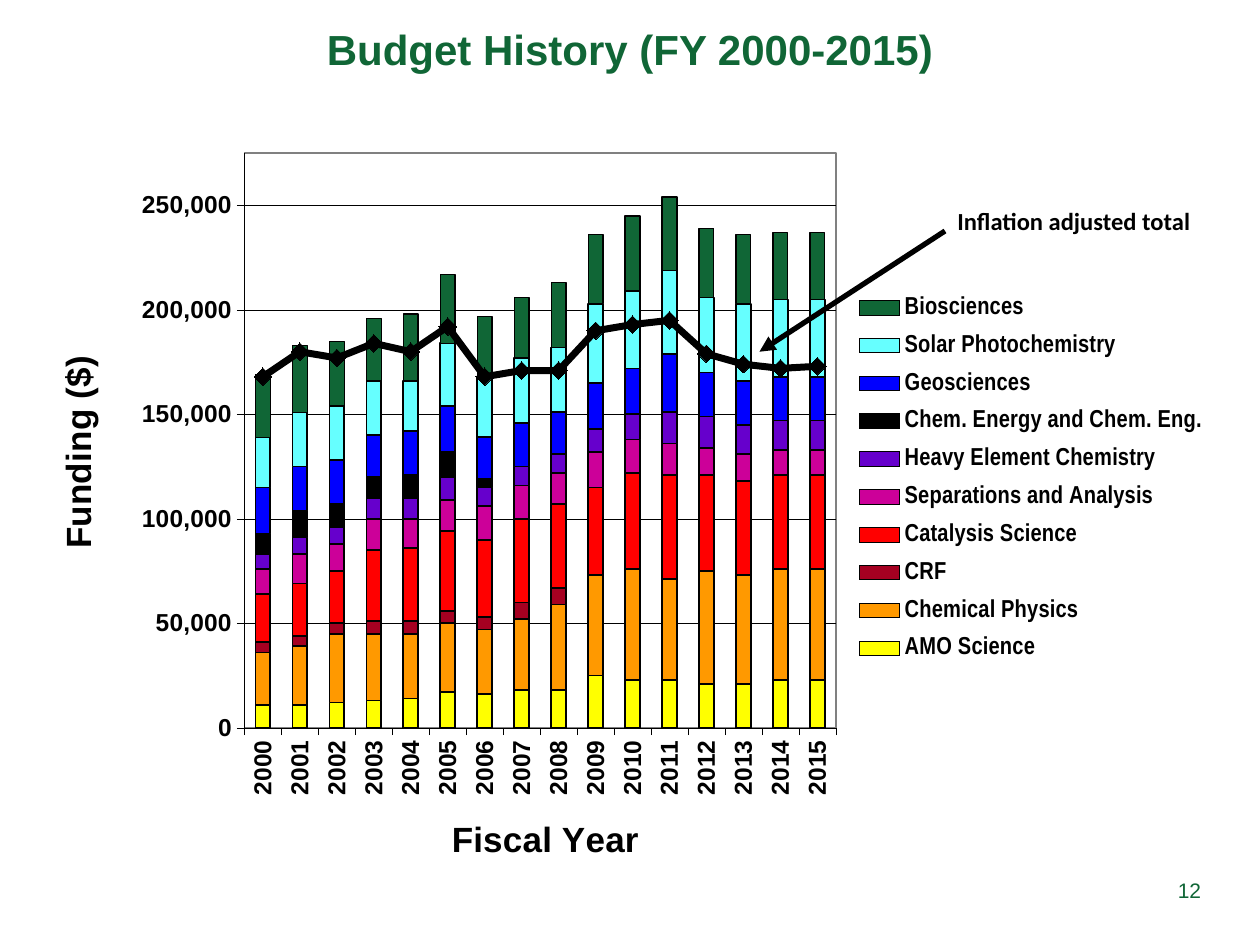
"""Build the budget history slide with a stacked chart and an adjusted total line."""
from dataclasses import dataclass
from typing import Any

from lxml.etree import SubElement as Sub
from pptx import Presentation
from pptx.chart.data import CategoryChartData as Data
from pptx.dml.color import RGBColor as Rgb
from pptx.enum.chart import XL_CHART_TYPE as Kind
from pptx.enum.chart import XL_LEGEND_POSITION as Side
from pptx.enum.chart import XL_MARKER_STYLE as Mark
from pptx.enum.chart import XL_TICK_MARK as Tick
from pptx.enum.shapes import MSO_CONNECTOR as Link
from pptx.enum.text import MSO_ANCHOR as Anchor
from pptx.enum.text import MSO_AUTO_SIZE as Fit
from pptx.enum.text import PP_ALIGN as Align
from pptx.oxml import parse_xml
from pptx.oxml.ns import nsdecls, qn
from pptx.util import Pt

HUE = {
    "black": "000000", "white": "FFFFFF", "gray": "808080", "green": "106636",
    "yellow": "FFFF00", "orange": "FF9900", "wine": "A50021", "red": "FF0000",
    "pink": "CC0099", "purple": "6600CC", "blue": "0000FF", "cyan": "66FFFF",
}


@dataclass
class Label:
    text: str
    box: tuple[float, float, float, float]
    face: str
    size: float
    hue: str
    bold: bool = False
    wide: bool = False


@dataclass
class Band:
    name: str
    hue: str
    vals: list[int]
    edge: float = 1


LABELS = [
    Label("Budget History (FY 2000-2015)", (0, 0, 720, 56), "Arial", 24, "green", True, True),
    Label("Inflation adjusted total", (540, 114, 164, 24.5), "Calibri", 14, "black", True),
    Label("12", (666, 498, 28, 21.6), "Arial", 12, "green"),
]
BANDS = [
    Band("AMO Science", "yellow",
         [11, 11, 12, 13, 14, 17, 16, 18, 18, 25, 23, 23, 21, 21, 23, 23]),
    Band("Chemical Physics", "orange",
         [25, 28, 33, 32, 31, 33, 31, 34, 41, 48, 53, 48, 54, 52, 53, 53]),
    Band("CRF", "wine", [5, 5, 5, 6, 6, 6, 6, 8, 8] + [0] * 7),
    Band("Catalysis Science", "red",
         [23, 25, 25, 34, 35, 38, 37, 40, 40, 42, 46, 50, 46, 45, 45, 45]),
    Band("Separations and Analysis", "pink",
         [12, 14, 13, 15, 14, 15, 16, 16, 15, 17, 16, 15, 13, 13, 12, 12]),
    Band("Heavy Element Chemistry", "purple",
         [7, 8, 8, 10, 10, 11, 9, 9, 9, 11, 12, 15, 15, 14, 14, 14]),
    Band("Chem. Energy and Chem. Eng.", "black",
         [10, 13, 11, 10, 11, 12, 4] + [0] * 9),
    Band("Geosciences", "blue",
         [22, 21, 21, 20, 21, 22, 20, 21, 20, 22, 22, 28, 21, 21, 21, 21]),
    Band("Solar Photochemistry", "cyan",
         [24, 26, 26, 26, 24, 30, 29, 31, 31, 38, 37, 40, 36, 37, 37, 37]),
    Band("Biosciences", "green",
         [30, 32, 31, 30, 32, 33, 29, 29, 31, 33, 36, 35, 33, 33, 32, 32], 0.75),
]
TOTAL = Band("Inflation adjusted total", "black",
             [168, 180, 177, 184, 180, 192, 168, 171, 171, 190, 193, 195,
              179, 174, 172, 173], 4)


def style(item: Any, vals: dict[str, Any]) -> None:
    for key, val in vals.items():
        setattr(item, key, val)


def ink(font: Any, face: str, size: float, hue: str, bold: bool) -> None:
    style(font, {"name": face, "size": Pt(size), "bold": bold})
    font.color.rgb = Rgb.from_string(HUE[hue])


def stroke(line: Any, hue: str, width: float) -> None:
    line.color.rgb = Rgb.from_string(HUE[hue])
    line.width = Pt(width)


def paint(fill: Any, hue: str) -> None:
    fill.solid()
    fill.fore_color.rgb = Rgb.from_string(HUE[hue])


def write(slide: Any, label: Label) -> None:
    frame = slide.shapes.add_textbox(*map(Pt, label.box)).text_frame
    style(frame, {
        "word_wrap": label.wide,
        "auto_size": Fit.NONE if label.wide else Fit.SHAPE_TO_FIT_TEXT,
        "vertical_anchor": Anchor.MIDDLE if label.wide else Anchor.TOP,
    })
    para = frame.paragraphs[0]
    para.alignment = Align.CENTER if label.wide else Align.LEFT
    run = para.add_run()
    run.text = label.text
    ink(run.font, label.face, label.size, label.hue, label.bold)


def place(root: Any, spots: dict[str, float], inner: bool = False) -> None:
    node = parse_xml(f"<c:layout {nsdecls('c')}><c:manualLayout/></c:layout>")
    rules = {"layoutTarget": "inner"} if inner else {}
    rules |= {"xMode": "edge", "yMode": "edge"} | spots
    for key, val in rules.items():
        Sub(node[0], qn(f"c:{key}")).set("val", str(val))
    old = root.find(qn("c:layout"))
    if old is None:
        root.insert(0, node)
    else:
        root.replace(old, node)


def split(chart: Any) -> None:
    bars = chart.element.xpath(".//c:barChart")[0]
    last = bars.findall(qn("c:ser"))[-1]
    flip = last.find(qn("c:invertIfNegative"))
    if flip is not None:
        last.remove(flip)
    lines = parse_xml(
        f"<c:lineChart {nsdecls('c')}><c:grouping val='standard'/>"
        "<c:varyColors val='0'/><c:marker val='1'/></c:lineChart>")
    lines.insert(2, last)
    for axis in bars.findall(qn("c:axId")):
        Sub(lines, qn("c:axId")).set("val", axis.get("val"))
    bars.addnext(lines)


def name_axis(axis: Any, text: str, left: float, top: float) -> None:
    style(axis, {"major_tick_mark": Tick.OUTSIDE, "minor_tick_mark": Tick.NONE})
    stroke(axis.format.line, "black", 0.25)
    ink(axis.tick_labels.font, "Arial", 14, "black", True)
    run = axis.axis_title.text_frame.paragraphs[0].add_run()
    run.text = text
    ink(run.font, "Arial", 20, "black", True)
    place(axis.axis_title.element, {"x": left, "y": top})


def draw_chart(slide: Any) -> None:
    data = Data()
    data.categories = [str(year) for year in range(2000, 2016)]
    for band in [*BANDS, TOTAL]:
        data.add_series(band.name, [val * 1000 for val in band.vals])
    box = map(Pt, (18, 66, 676, 432))
    chart = slide.shapes.add_chart(Kind.COLUMN_STACKED, *box, data).chart
    style(chart, {"has_title": False, "has_legend": True})
    ink(chart.font, "Arial", 12, "black", False)
    split(chart)
    bars, lines = chart.plots
    style(bars, {"gap_width": 150, "overlap": 100, "vary_by_categories": False})
    for band, ser in zip(BANDS, bars.series):
        paint(ser.format.fill, band.hue)
        stroke(ser.format.line, "black", band.edge)
    total = lines.series[0]
    total.smooth = False
    stroke(total.format.line, TOTAL.hue, TOTAL.edge)
    style(total.marker, {"style": Mark.DIAMOND, "size": 10})
    paint(total.marker.format.fill, TOTAL.hue)
    stroke(total.marker.format.line, TOTAL.hue, 0.75)
    years, funds = chart.category_axis, chart.value_axis
    name_axis(years, "Fiscal Year", 0.35, 0.92)
    name_axis(funds, "Funding ($)", 0.015, 0.31)
    turn = chart.element.xpath(".//c:catAx/c:txPr/a:bodyPr")[0]
    turn.set("rot", "-5400000")
    turn.set("vert", "horz")
    style(funds, {"minimum_scale": 0, "maximum_scale": 275000, "major_unit": 50000})
    style(funds.tick_labels, {
        "number_format": "#,##0;[Red]#,##0", "number_format_is_linked": False})
    stroke(funds.major_gridlines.format.line, "black", 0.25)
    area = chart.element.xpath(".//c:plotArea")[0]
    place(area, {"x": 0.18, "y": 0.05, "w": 0.5, "h": 0.76}, True)
    area.append(parse_xml(
        f"<c:spPr {nsdecls('c', 'a')}><a:solidFill><a:srgbClr val='{HUE['white']}'/>"
        f"</a:solidFill><a:ln w='{Pt(1)}'><a:solidFill><a:srgbClr val='{HUE['gray']}'/>"
        "</a:solidFill></a:ln></c:spPr>"))
    style(chart.legend, {"position": Side.RIGHT, "include_in_layout": False})
    ink(chart.legend.font, "Arial Narrow", 14, "black", True)
    key = chart.element.xpath(".//c:legend")[0]
    place(key, {"x": 0.69, "y": 0.22, "w": 0.31, "h": 0.52})
    key.find(qn("c:legendPos")).addnext(parse_xml(
        f"<c:legendEntry {nsdecls('c')}><c:idx val='{len(BANDS)}'/>"
        "<c:delete val='1'/></c:legendEntry>"))


def draw_arrow(slide: Any) -> None:
    arrow = slide.shapes.add_connector(Link.STRAIGHT, *map(Pt, (540, 132, 434, 201)))
    stroke(arrow.line, "black", 3)
    props = arrow.element.spPr
    Sub(props.find(qn("a:ln")), qn("a:tailEnd")).set("type", "triangle")
    Sub(props, qn("a:effectLst"))


def main() -> None:
    deck = Presentation()
    style(deck, {"slide_width": Pt(720), "slide_height": Pt(540)})
    slide = deck.slides.add_slide(deck.slide_layouts[6])
    draw_chart(slide)
    draw_arrow(slide)
    for label in LABELS:
        write(slide, label)
    deck.save("out.pptx")


if __name__ == "__main__":
    main()
